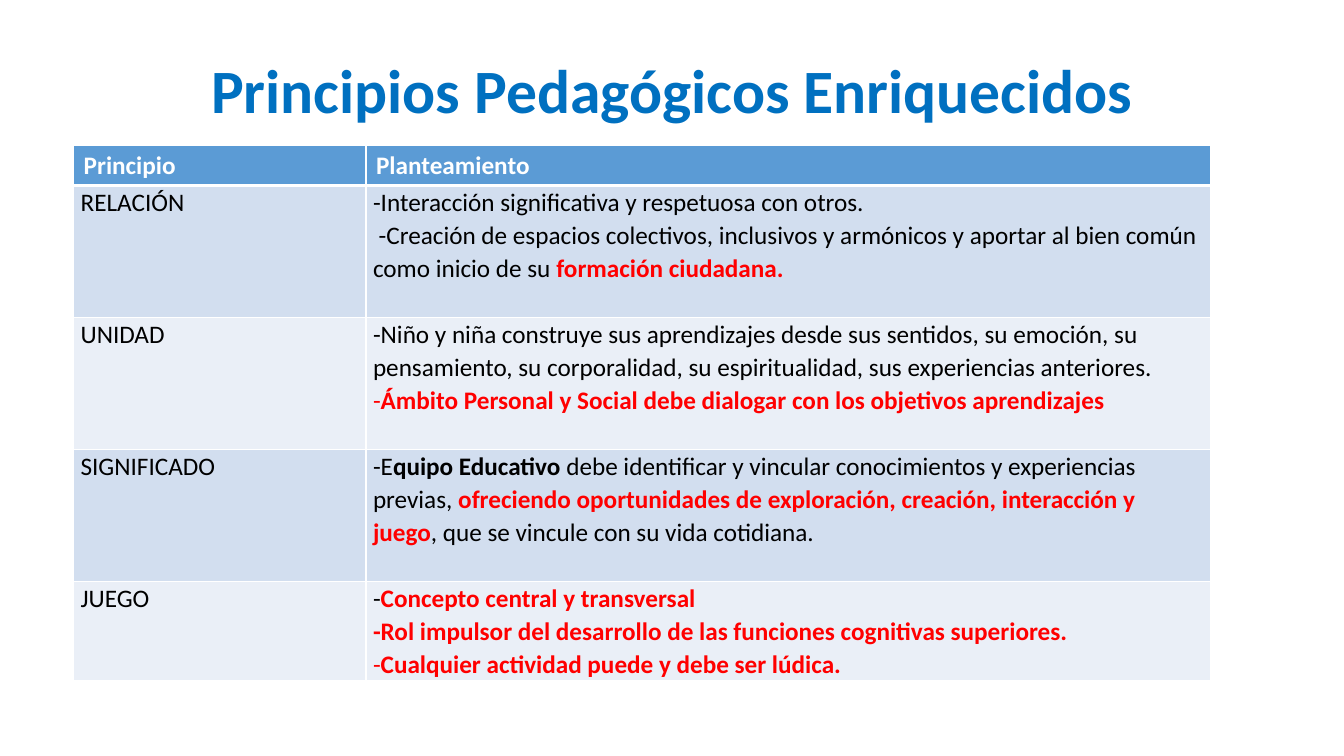
from dataclasses import dataclass

from lxml import etree
from pptx import Presentation
from pptx.dml.color import RGBColor
from pptx.enum.text import MSO_ANCHOR, PP_ALIGN
from pptx.oxml.ns import qn
from pptx.util import Inches, Pt

CENTER = PP_ALIGN.CENTER
MIDDLE = MSO_ANCHOR.MIDDLE
TOP = MSO_ANCHOR.TOP


@dataclass(frozen=True)
class Theme:
    font: str = "Calibri"
    title: str = "0070C0"
    header: str = "5B9BD5"
    bands: tuple = ("D2DEEF", "EAEFF7")
    white: str = "FFFFFF"
    black: str = "000000"
    red: str = "FF0000"
    title_size: int = 44
    body_size: int = 18


THEME = Theme()
PLAIN = (THEME.black, False)
BOLD = (THEME.black, True)
RED = (THEME.red, False)
RED_BOLD = (THEME.red, True)
HEADER = (THEME.white, True)

HEADINGS = ["Principio", "Planteamiento"]
PRINCIPLES = [
    ("RELACIÓN", 1.31, [
        [("-Interacción significativa y respetuosa con otros.", PLAIN)],
        [(" -Creación de espacios colectivos, inclusivos y armónicos y aportar "
          "al bien común como inicio de su ", PLAIN),
         ("formación ciudadana.", RED_BOLD)],
    ]),
    ("UNIDAD", 1.31, [
        [("-Niño y niña construye sus aprendizajes desde sus sentidos, su emoción, "
          "su pensamiento, su corporalidad, su espiritualidad, sus experiencias "
          "anteriores.", PLAIN)],
        [("-", RED),
         ("Ámbito Personal y Social debe dialogar con los objetivos aprendizajes",
          RED_BOLD)],
    ]),
    ("SIGNIFICADO", 1.31, [
        [("-E", PLAIN),
         ("quipo Educativo ", BOLD),
         ("debe identificar y vincular conocimientos y experiencias previas, ", PLAIN),
         ("ofreciendo oportunidades de exploración, creación, interacción y juego",
          RED_BOLD),
         (", que se vincule con su vida cotidiana.", PLAIN)],
    ]),
    ("JUEGO", 0.98, [
        [("-", PLAIN), ("Concepto central y transversal", RED_BOLD)],
        [("-Rol impulsor del desarrollo de las funciones cognitivas superiores.",
          RED_BOLD)],
        [("-", RED), ("Cualquier actividad puede y debe ser lúdica.", RED_BOLD)],
    ]),
]


class SlideBuilder:
    def __init__(self, slide, theme):
        self.s = slide
        self.theme = theme

    def add_text(self, tf, paragraphs, size, spacing, align=None):
        for i, runs in enumerate(paragraphs):
            p = tf.add_paragraph() if i else tf.paragraphs[0]
            p.line_spacing = spacing
            p.alignment = align
            for text, (color, bold) in runs:
                r = p.add_run()
                r.text = text
                r.font.name = self.theme.font
                r.font.size = Pt(size)
                r.font.bold = bold
                r.font.color.rgb = RGBColor.from_string(color)

    def title(self, text, left, top, width, height):
        sp = self.s.shapes.add_textbox(
            Inches(left), Inches(top), Inches(width), Inches(height))
        tf = sp.text_frame
        tf.word_wrap = True
        tf.vertical_anchor = MIDDLE
        self.add_text(tf, [[(text, (self.theme.title, True))]],
                      self.theme.title_size, 0.9, CENTER)

    def borders(self, cell, widths):
        tcPr = cell._tc.get_or_add_tcPr()
        for i, (side, width) in enumerate(widths.items()):
            ln = etree.Element(qn(f"a:ln{side}"), w=str(Pt(width)))
            fill = etree.SubElement(ln, qn("a:solidFill"))
            etree.SubElement(fill, qn("a:srgbClr"), val=self.theme.white)
            tcPr.insert(i, ln)

    def cell(self, cell, paragraphs, fill, spacing, margins, widths):
        cell.margin_left = cell.margin_right = Inches(margins[0])
        cell.margin_top = cell.margin_bottom = Inches(margins[1])
        cell.vertical_anchor = TOP
        cell.fill.solid()
        cell.fill.fore_color.rgb = RGBColor.from_string(fill)
        self.borders(cell, widths)
        self.add_text(cell.text_frame, paragraphs, self.theme.body_size, spacing)

    def table(self, headings, rows, left, top, col_widths, header_height):
        heights = [header_height] + [height for _, height, _ in rows]
        table = self.s.shapes.add_table(
            len(heights), len(col_widths), Inches(left), Inches(top),
            Inches(sum(col_widths)), Inches(sum(heights))).table
        for column, width in zip(table.columns, col_widths):
            column.width = Inches(width)
        for row, height in zip(table.rows, heights):
            row.height = Inches(height)
        for j, heading in enumerate(headings):
            self.cell(table.cell(0, j), [[(heading, HEADER)]], self.theme.header,
                      1.0, (0.1, 0.05), {"L": 1, "R": 1, "T": 1, "B": 3})
        for i, (name, _, statement) in enumerate(rows):
            widths = {"L": 1, "R": 1, "T": 1 if i else 3, "B": 1}
            for j, paragraphs in enumerate([[[(name, PLAIN)]], statement]):
                self.cell(table.cell(i + 1, j), paragraphs, self.theme.bands[i % 2],
                          1.07, (0.07, 0), widths)


def main():
    prs = Presentation()
    prs.slide_width = Inches(13.33)
    prs.slide_height = Inches(7.5)
    builder = SlideBuilder(prs.slides.add_slide(prs.slide_layouts[6]), THEME)
    builder.title("Principios Pedagógicos Enriquecidos", 0.67, 0.3, 12, 1.25)
    builder.table(HEADINGS, PRINCIPLES, 0.73, 1.44, [2.9, 8.38], 0.4)
    prs.save("out.pptx")


if __name__ == "__main__":
    main()
